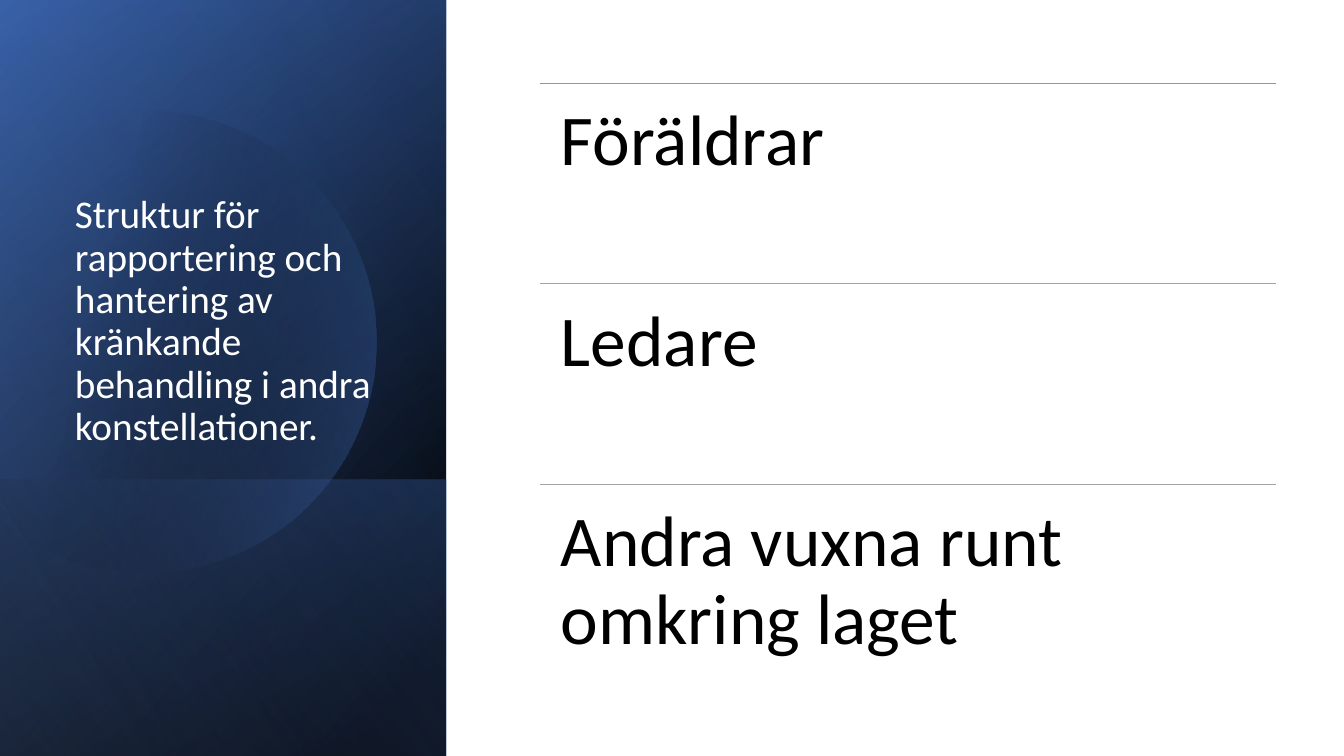
import dataclasses
import math

import lxml.etree
import pptx
import pptx.dml.color
import pptx.enum.shapes
import pptx.enum.text
import pptx.oxml
import pptx.oxml.ns
import pptx.util

SCALE = 914400 / 100.8


@dataclasses.dataclass(frozen=True)
class Theme:
    """Colours, font and type sizes of the slide."""
    font: str = "Calibri"
    title_size: int = 28
    row_size: int = 51
    line_width: float = 0.5
    white: str = "FFFFFF"
    black: str = "000000"
    navy: str = "2F5597"
    blue: str = "4472C4"
    pale_blue: str = "8FAADC"
    orange: str = "ED7D31"
    gray: str = "A5A5A5"


THEME = Theme()
TITLE = "Struktur för rapportering och hantering av kränkande behandling i andra konstellationer."
ROWS = [
    ("Föräldrar", THEME.orange),
    ("Ledare", THEME.gray),
    ("Andra vuxna runt omkring laget", THEME.gray),
]


def px(length):
    """Turn a length in px into EMU."""
    return pptx.util.Emu(round(length * SCALE))


def rgb(color):
    """Turn a hex string into a colour."""
    return pptx.dml.color.RGBColor.from_string(color)


def add_text(slide, text, box, *, size, color, margins):
    """Add a wrapping text box with the given margins (horizontal, vertical)."""
    shape = slide.shapes.add_textbox(*map(px, box))
    frame = shape.text_frame
    frame.word_wrap = True
    frame.vertical_anchor = pptx.enum.text.MSO_ANCHOR.TOP
    frame.margin_left = frame.margin_right = px(margins[0])
    frame.margin_top = frame.margin_bottom = px(margins[1])
    paragraph = frame.paragraphs[0]
    paragraph.line_spacing = 0.9
    run = paragraph.add_run()
    run.text = text
    run.font.name = THEME.font
    run.font.size = pptx.util.Pt(size)
    run.font.color.rgb = rgb(color)


def fill_gradient(shape, stops, angle):
    """Fill a shape with stops of (position, colour, opacity), without outline or shadow."""
    shape.shadow.inherit = False
    shape.line.fill.background()
    marks = "".join(
        f'<a:gs pos="{position * 1000}"><a:srgbClr val="{color}">'
        f'<a:alpha val="{opacity * 1000}"/></a:srgbClr></a:gs>'
        for position, color, opacity in stops
    )
    gradient = pptx.oxml.parse_xml(
        f'<a:gradFill {pptx.oxml.ns.nsdecls("a")} rotWithShape="1"><a:gsLst>{marks}</a:gsLst>'
        f'<a:lin ang="{angle * 60000}" scaled="0"/></a:gradFill>'
    )
    shape._element.spPr.find(pptx.oxml.ns.qn("a:prstGeom" if shape.shape_type ==
                             pptx.enum.shapes.MSO_SHAPE_TYPE.AUTO_SHAPE else "a:custGeom")
                             ).addnext(gradient)


def add_layer(slide, box, stops, angle):
    """Cover the box with a mirrored rectangle turned by a quarter."""
    left, top, width, height = box
    shift = (width - height) / 2
    shape = slide.shapes.add_shape(
        pptx.enum.shapes.MSO_SHAPE.RECTANGLE,
        px(left + shift), px(top - shift), px(height), px(width),
    )
    shape.rotation = 90
    shape._element.spPr.find(pptx.oxml.ns.qn("a:xfrm")).set("flipH", "1")
    fill_gradient(shape, stops, angle)


def add_disc(slide, box, radius, stops, angle):
    """Add a disc cut off by the left edge of the box."""
    left, top, _, _ = box
    center_x, center_y = left + 145, top + 342
    limit = math.acos((left - center_x) / radius)
    steps = 120
    turns = [limit * (2 * step / steps - 1) for step in range(steps + 1)]
    points = [
        (px(center_x + radius * math.cos(turn)), px(center_y + radius * math.sin(turn)))
        for turn in turns
    ]
    builder = slide.shapes.build_freeform(*points[0])
    builder.add_line_segments(points[1:], close=True)
    fill_gradient(builder.convert_to_shape(), stops, angle)


def add_title_panel(slide, box):
    """Build the blue panel with the title."""
    left, top, width, height = box
    band = 276
    add_layer(slide, box, [(8, THEME.black, 100), (100, THEME.navy, 100)], 50)
    add_layer(slide, box, [(0, THEME.black, 0), (99, THEME.blue, 46)], 30)
    add_layer(slide, (left, top + height - band, width, band),
              [(2, THEME.blue, 29), (100, THEME.black, 30)], 130)
    add_disc(slide, box, 231, [(29, THEME.black, 0), (100, THEME.blue, 43)], 14)
    add_layer(slide, box, [(0, THEME.black, 0), (99, THEME.pale_blue, 11)], 120)
    add_text(slide, TITLE, (left + 65, top + 195, 344, 260),
             size=THEME.title_size, color=THEME.white, margins=(10, 0))


def add_rule(slide, left, top, width, color):
    """Draw a thin horizontal line."""
    rule = slide.shapes.add_connector(
        pptx.enum.shapes.MSO_CONNECTOR.STRAIGHT,
        px(left), px(top), px(left + width), px(top),
    )
    rule.line.color.rgb = rgb(color)
    rule.line.width = pptx.util.Pt(THEME.line_width)
    lxml.etree.SubElement(rule._element.spPr, pptx.oxml.ns.qn("a:effectLst"))


def add_row_list(slide, box):
    """Stack the rows in equal heights, each under its line."""
    left, top, width, height = box
    row_height = height / len(ROWS)
    for index, (text, color) in enumerate(ROWS):
        row_top = top + index * row_height
        add_rule(slide, left, row_top, width, color)
        add_text(slide, text, (left, row_top, width, row_height),
                 size=THEME.row_size, color=THEME.black, margins=(21, 21))


def main():
    """Build and save the slide."""
    presentation = pptx.Presentation()
    presentation.slide_width = px(1344)
    presentation.slide_height = px(756)
    slide = presentation.slides.add_slide(presentation.slide_layouts[6])
    add_title_panel(slide, (0, 0, 446, 756))
    add_row_list(slide, (540, 83, 736, 602))
    presentation.save("out.pptx")


if __name__ == "__main__":
    main()
